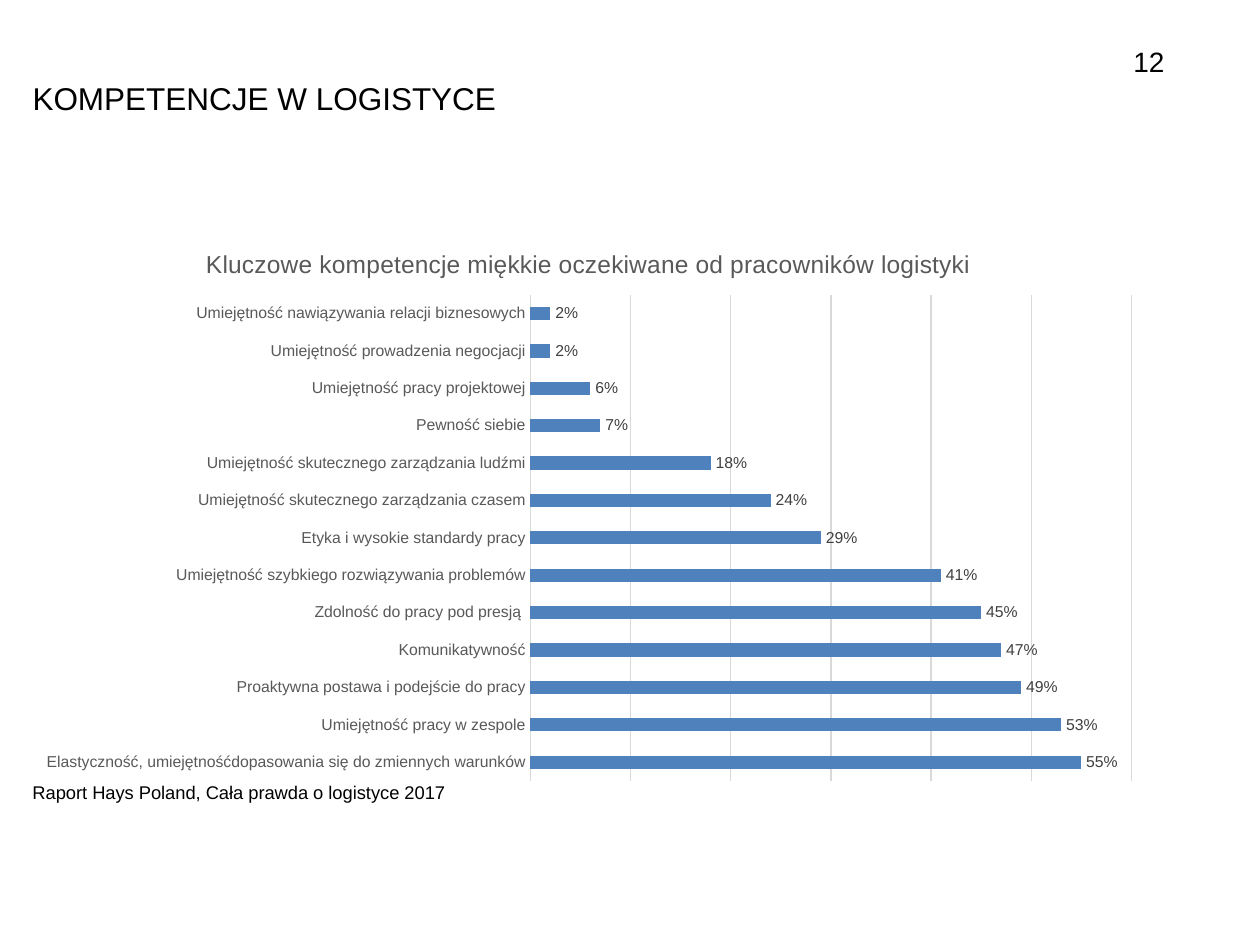
from lxml import etree
from pptx import Presentation
from pptx import util as u
from pptx.chart.data import CategoryChartData
from pptx.dml.color import RGBColor
from pptx.enum import chart as kinds, text
from pptx.oxml import parse_xml
from pptx.oxml.ns import nsdecls, qn

COMPETENCES = [
    ("Elastyczność, umiejętnośćdopasowania się do zmiennych warunków", 0.55),
    ("Umiejętność pracy w zespole", 0.53),
    ("Proaktywna postawa i podejście do pracy", 0.49),
    ("Komunikatywność", 0.47),
    ("Zdolność do pracy pod presją ", 0.45),
    ("Umiejętność szybkiego rozwiązywania problemów", 0.41),
    ("Etyka i wysokie standardy pracy", 0.29),
    ("Umiejętność skutecznego zarządzania czasem", 0.24),
    ("Umiejętność skutecznego zarządzania ludźmi", 0.18),
    ("Pewność siebie", 0.07),
    ("Umiejętność pracy projektowej", 0.06),
    ("Umiejętność prowadzenia negocjacji", 0.02),
    ("Umiejętność nawiązywania relacji biznesowych", 0.02),
]


def color(value):
    return RGBColor.from_string(value)


def style_font(font, size, fill="000000", name="Arial"):
    font.size, font.name, font.bold = u.Pt(size), name, False
    font.color.rgb = color(fill)


def write(frame, words, size=18, fill="000000", align=text.PP_ALIGN.LEFT):
    para = frame.paragraphs[0]
    para.alignment = align
    span = para.add_run()
    span.text = words
    style_font(span.font, size, fill)


def set_layout(parent, before, **places):
    for old in parent.findall(qn("c:layout")):
        parent.remove(old)
    layout = parse_xml(f"<c:layout {nsdecls('c')}/>")
    manual = etree.SubElement(layout, qn("c:manualLayout"))
    if "w" in places:
        etree.SubElement(manual, qn("c:layoutTarget")).set("val", "inner")
    for side in "xy":
        etree.SubElement(manual, qn(f"c:{side}Mode")).set("val", "edge")
    for side, share in places.items():
        etree.SubElement(manual, qn(f"c:{side}")).set("val", str(share))
    parent.find(qn(before)).addprevious(layout)


class SlideBuilder:
    grid = "D9D9D9"
    muted = "595959"
    bar = "4F81BD"

    def __init__(self, deck):
        self.slide = deck.slides.add_slide(deck.slide_layouts[6])

    def text_box(self, words, left, top, width, height,
                 anchor=text.MSO_ANCHOR.TOP, **style):
        box = self.slide.shapes.add_textbox(*map(u.Inches, (left, top, width, height)))
        box.text_frame.word_wrap = True
        box.text_frame.vertical_anchor = anchor
        write(box.text_frame, words, **style)

    def bar_chart(self, title, rows, left, top, width, height):
        data = CategoryChartData(number_format="0%")
        data.categories = [name for name, share in rows]
        data.add_series("Series 1", [share for name, share in rows])
        chart = self.slide.shapes.add_chart(
            kinds.XL_CHART_TYPE.BAR_CLUSTERED,
            *map(u.Inches, (left, top, width, height)), data).chart
        style_font(chart.font, 10, name="Calibri")
        chart.has_legend = False
        chart.has_title = True
        write(chart.chart_title.text_frame, title, 14, self.muted,
              text.PP_ALIGN.CENTER)
        chart.chart_title.include_in_layout = False
        self.style_axes(chart)
        self.style_bars(chart.plots[0])
        root = chart.element.find(qn("c:chart"))
        set_layout(root.find(qn("c:title")), "c:overlay", x=0.16, y=0.04)
        set_layout(root.find(qn("c:plotArea")), "c:barChart",
                   x=0.45, y=0.13, w=0.53, h=0.85)

    def style_axes(self, chart):
        names, shares = chart.category_axis, chart.value_axis
        names.major_tick_mark = kinds.XL_TICK_MARK.NONE
        style_font(names.tick_labels.font, 9, self.muted)
        shares.visible = False
        shares.minimum_scale, shares.maximum_scale = 0, 0.6
        shares.major_unit = 0.1
        shares.has_major_gridlines = True
        for line in (names.format.line, shares.major_gridlines.format.line):
            line.color.rgb = color(self.grid)
            line.width = u.Pt(0.75)

    def style_bars(self, plot):
        plot.gap_width = 182
        plot.vary_by_categories = False
        series = plot.series[0]
        series.format.fill.solid()
        series.format.fill.fore_color.rgb = color(self.bar)
        labels = series.data_labels
        labels.show_value = True
        labels.number_format, labels.number_format_is_linked = "0%", False
        labels.position = kinds.XL_LABEL_POSITION.OUTSIDE_END
        style_font(labels.font, 9, "404040")


def main():
    deck = Presentation()
    deck.slide_width, deck.slide_height = u.Inches(10), u.Inches(7.5)
    page = SlideBuilder(deck)
    page.text_box("KOMPETENCJE W LOGISTYCE", 0.16, 0.58, 8.12, 0.73)
    page.text_box("12", 7, 0.23, 2.34, 0.52, anchor=text.MSO_ANCHOR.MIDDLE,
                  size=16, align=text.PP_ALIGN.RIGHT)
    page.bar_chart("Kluczowe kompetencje miękkie oczekiwane od pracowników logistyki",
                   COMPETENCES, 0.16, 1.75, 9, 4.54)
    page.text_box("Raport Hays Poland, Cała prawda o logistyce 2017",
                  0.16, 6.15, 8.64, 0.28, size=10.5)
    deck.save("out.pptx")


if __name__ == "__main__":
    main()
